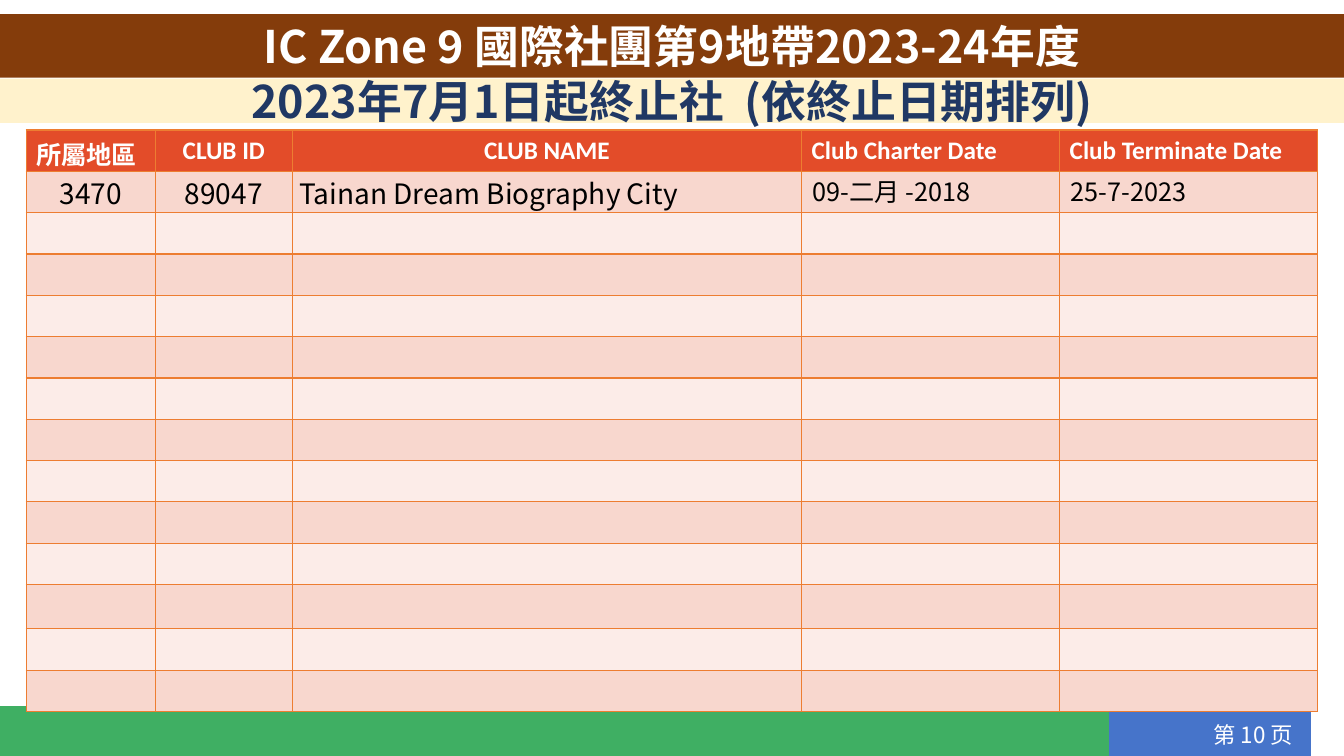
from dataclasses import dataclass

from lxml import etree
from pptx import Presentation
from pptx import util as u
from pptx.dml.color import RGBColor
from pptx.enum import shapes, text
from pptx.oxml import ns


@dataclass(frozen=True)
class Theme:
    """Colours, fonts and type sizes of the slide."""
    white: str = "FFFFFF"
    black: str = "000000"
    navy: str = "203864"
    brown: str = "843C0B"
    cream: str = "FFF2CC"
    green: str = "3FAF63"
    blue: str = "4674CA"
    header: str = "E34C29"
    bands: tuple = ("F8D7CE", "FCECE8")
    border: str = "ED7D31"
    title_font: str = "Noto Sans CJK JP"
    body_font: str = "Noto Sans CJK SC"
    latin_font: str = "Calibri"
    title: int = 32
    cell: int = 20
    label: int = 18
    page: int = 16
    empty: int = 12


T = Theme()
W, H = 13.33, 7.5
LEFT, CENTER = text.PP_ALIGN.LEFT, text.PP_ALIGN.CENTER
COLUMNS = (1.28, 1.36, 5.05, 2.56, 2.56)
HEADERS = ("所屬地區", "CLUB ID", "CLUB NAME", "Club Charter Date", "Club Terminate Date")
CLUB = ("3470", "89047", "Tainan Dream Biography City", "09-二月 -2018", "25-7-2023")
ROWS, ROW_H, TALL_ROW, TALL_H = 14, 0.41, 11, 0.44


def paint(sp, color):
    """Give a shape a plain fill without line or shadow."""
    sp.fill.solid()
    sp.fill.fore_color.rgb = RGBColor.from_string(color)
    sp.line.fill.background()
    sp.shadow.inherit = False


def write(tf, words, font, size, color, bold=False, align=CENTER):
    """Set one paragraph of text with its Latin and East Asian font."""
    p = tf.paragraphs[0]
    r = p.add_run()
    r.text, p.alignment = words, align
    f = r.font
    f.name, f.size, f.bold = font, u.Pt(size), bold
    f.color.rgb = RGBColor.from_string(color)
    etree.SubElement(r._r.get_or_add_rPr(), ns.qn("a:ea"), typeface=font)


def banner(s, top, height, fill, words, color):
    """Draw a full-width title band."""
    sp = s.shapes.add_shape(shapes.MSO_SHAPE.RECTANGLE, 0, u.Inches(top),
                            u.Inches(W), u.Inches(height))
    paint(sp, fill)
    tf = sp.text_frame
    tf.vertical_anchor = text.MSO_ANCHOR.MIDDLE
    write(tf, words, T.title_font, T.title, color, True)


def polygon(s, points, color):
    """Draw a filled outline through points in inches."""
    fb = s.shapes.build_freeform(*points[0], scale=u.Inches(1))
    fb.add_line_segments(points[1:], close=True)
    paint(fb.convert_to_shape(), color)


def footer(s, top, strip_top, split):
    """Draw the green strip and the blue page tab."""
    polygon(s, [(0, H), (split - 0.05, H), (split + 0.03, strip_top), (0, strip_top)], T.green)
    polygon(s, [(split + 0.13, top), (split, H), (W, H), (W, top)], T.blue)
    tf = s.shapes.add_textbox(u.Inches(11.82), u.Inches(top + 0.02),
                              u.Inches(1.22), u.Inches(0.37)).text_frame
    tf.word_wrap = True
    tf.margin_left = tf.margin_right = 0
    write(tf, "第 10 页", T.body_font, T.page, T.white)


def style_cell(cell, color):
    """Fill a cell and rule its four sides."""
    cell.fill.solid()
    cell.fill.fore_color.rgb = RGBColor.from_string(color)
    tcPr = cell._tc.get_or_add_tcPr()
    for i, side in enumerate("LRTB"):
        ln = etree.Element(ns.qn(f"a:ln{side}"), w=str(u.Pt(1)))
        fill = etree.SubElement(ln, ns.qn("a:solidFill"))
        etree.SubElement(fill, ns.qn("a:srgbClr"), val=T.border)
        tcPr.insert(i, ln)


def header_cell(cell, col):
    """Write one column heading."""
    font = T.latin_font if col else T.body_font
    cell.margin_bottom = 0
    write(cell.text_frame, HEADERS[col], font, T.label, T.white, True,
          CENTER if col in (1, 2) else LEFT)


def club_cell(cell, col):
    """Write one value of the terminated club."""
    cell.margin_left = u.Inches((0.01, 0.01, 0.07, 0.11, 0.11)[col])
    cell.margin_right = cell.margin_top = u.Inches(0.01)
    cell.margin_bottom = 0
    write(cell.text_frame, CLUB[col], T.body_font, T.label if col > 2 else T.cell,
          T.black, align=CENTER if col < 2 else LEFT)


def club_table(s, left, top):
    """Draw the table of terminated clubs with banded empty rows."""
    tbl = s.shapes.add_table(ROWS, len(COLUMNS), u.Inches(left), u.Inches(top),
                             u.Inches(sum(COLUMNS)), u.Inches(ROWS * ROW_H)).table
    for column, width in zip(tbl.columns, COLUMNS):
        column.width = u.Inches(width)
    for i, row in enumerate(tbl.rows):
        row.height = u.Inches(TALL_H if i == TALL_ROW else ROW_H)
        for j, cell in enumerate(row.cells):
            style_cell(cell, T.bands[(i - 1) % 2] if i else T.header)
            if i == 0:
                header_cell(cell, j)
            elif i == 1:
                club_cell(cell, j)
            else:
                cell.text_frame.paragraphs[0].font.size = u.Pt(T.empty)


def main():
    """Build and save the slide."""
    prs = Presentation()
    prs.slide_width, prs.slide_height = u.Inches(W), u.Inches(H)
    s = prs.slides.add_slide(prs.slide_layouts[6])
    footer(s, 7.09, 7.24, 11.31)
    banner(s, 0.14, 0.63, T.brown, "IC Zone 9 國際社團第9地帶2023-24年度", T.white)
    banner(s, 0.78, 0.44, T.cream, "2023年7月1日起終止社  (依終止日期排列)", T.navy)
    club_table(s, 0.26, 1.29)
    prs.save("out.pptx")


if __name__ == "__main__":
    main()
